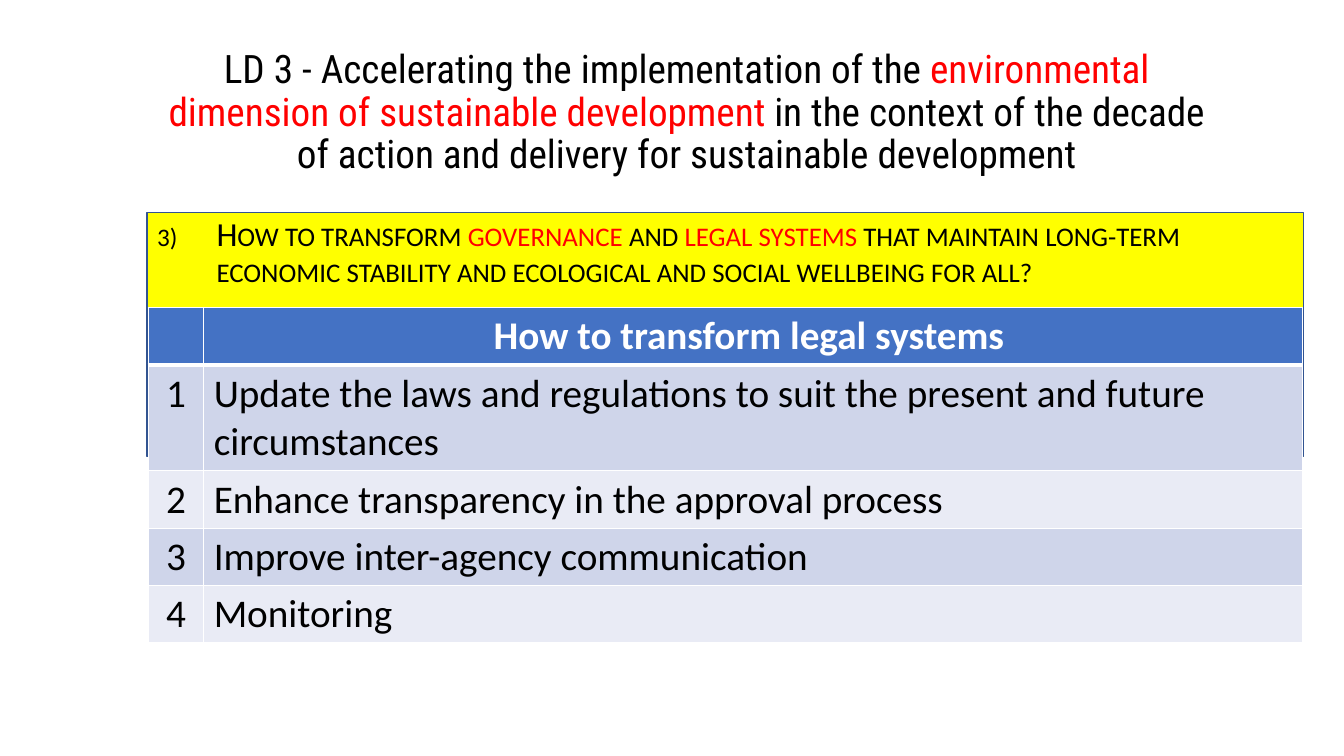
"""Build the slide on transforming governance and legal systems."""
import dataclasses

import lxml.etree
import pptx
import pptx.dml.color
import pptx.enum.shapes
import pptx.enum.text
import pptx.oxml.ns
import pptx.util

Inches = pptx.util.Inches
Pt = pptx.util.Pt
ALIGN = pptx.enum.text.PP_ALIGN


@dataclasses.dataclass(frozen=True)
class Theme:
    """Colours, fonts and type sizes of the slide."""
    ink: str = "000000"
    accent: str = "FF0000"
    white: str = "FFFFFF"
    panel: str = "FFFF00"
    panel_line: str = "325491"
    header: str = "4472C4"
    bands: tuple = ("CFD5EA", "E9EBF5")
    title_font: str = "Roboto Condensed"
    body_font: str = "Calibri"
    large: int = 28
    medium: int = 24


THEME = Theme()

TITLE = [
    ("LD 3 - Accelerating the implementation of the ", THEME.ink),
    ("environmental dimension of sustainable development ", THEME.accent),
    ("in the context of the decade of action and delivery for sustainable development", THEME.ink),
]
QUESTION = [
    ("How to transform ", THEME.ink),
    ("governance", THEME.accent),
    (" and ", THEME.ink),
    ("legal systems ", THEME.accent),
    ("that maintain long-term economic stability and ecological and social wellbeing for all?", THEME.ink),
]
QUESTION_NUMBER = 3
TABLE_HEADING = "How to transform legal systems "
MEASURES = [
    "Update the laws and regulations to suit the present and future circumstances",
    "Enhance transparency in the approval process",
    "Improve inter-agency communication",
    "Monitoring",
]
TITLE_BOX = (1.46, 0.4, 10.7, 1.45)
PANEL_BOX = (1.46, 2.11, 11.47, 2.42)
QUESTION_BOX = (1.46, 2.11, 10.96, 5.33)
TABLE_CORNER = (1.47, 3.05)
COLUMN_WIDTHS = (0.55, 10.9)
ROW_HEIGHTS = (0.57, 1.05, 0.57, 0.57, 0.57)


def rgb(value):
    """Return a colour object for a hex value."""
    return pptx.dml.color.RGBColor.from_string(value)


def inches(box):
    """Convert a tuple of numbers to lengths."""
    return [Inches(value) for value in box]


def add_node(parent, tag, **attributes):
    """Append a drawing element and return it."""
    return lxml.etree.SubElement(parent, pptx.oxml.ns.qn(tag), attributes)


def write_spans(para, spans, font_name, size):
    """Fill a paragraph with coloured spans of one font."""
    para.line_spacing = 0.9
    para.font.name = font_name
    para.font.size = Pt(size)
    for text, colour in spans:
        span = para.add_run()
        span.text = text
        span.font.color.rgb = rgb(colour)


def add_title(page):
    """Place and fill the title placeholder."""
    title = page.shapes.title
    title.left, title.top, title.width, title.height = inches(TITLE_BOX)
    frame = title.text_frame
    frame.word_wrap = True
    frame.auto_size = pptx.enum.text.MSO_AUTO_SIZE.NONE
    frame.vertical_anchor = pptx.enum.text.MSO_ANCHOR.MIDDLE
    para = frame.paragraphs[0]
    para.alignment = ALIGN.CENTER
    write_spans(para, TITLE, THEME.title_font, THEME.large)


def add_panel(page):
    """Draw the yellow panel behind the question."""
    panel = page.shapes.add_shape(pptx.enum.shapes.MSO_SHAPE.RECTANGLE, *inches(PANEL_BOX))
    panel.shadow.inherit = False
    panel.fill.solid()
    panel.fill.fore_color.rgb = rgb(THEME.panel)
    panel.line.color.rgb = rgb(THEME.panel_line)
    panel.line.width = Pt(1)


def add_question(page):
    """Write the numbered question in small capitals."""
    frame = page.shapes.add_textbox(*inches(QUESTION_BOX)).text_frame
    frame.word_wrap = True
    para = frame.paragraphs[0]
    para.space_before = Pt(10)
    write_spans(para, QUESTION, THEME.body_font, THEME.medium)
    for span in para.runs:
        span.font._element.set("cap", "small")
    settings = para._p.get_or_add_pPr()
    settings.set("marL", str(Inches(0.59)))
    settings.set("indent", str(-Inches(0.59)))
    default_font = settings.find(pptx.oxml.ns.qn("a:defRPr"))
    size = add_node(settings, "a:buSzPct", val="75000")
    number = add_node(settings, "a:buAutoNum", type="arabicParenR", startAt=str(QUESTION_NUMBER))
    if default_font is not None:
        default_font.addprevious(size)
        default_font.addprevious(number)


def style_cell(cell, fill, bottom_width):
    """Give a cell white borders and a solid fill."""
    settings = cell._tc.get_or_add_tcPr()
    for side, width in (("L", 1), ("R", 1), ("T", 1), ("B", bottom_width)):
        border = add_node(settings, f"a:ln{side}", w=str(Pt(width)))
        add_node(add_node(border, "a:solidFill"), "a:srgbClr", val=THEME.white)
    cell.fill.solid()
    cell.fill.fore_color.rgb = rgb(fill)


def add_measures(page):
    """Build the table of numbered measures."""
    rows = [("", TABLE_HEADING)]
    rows += [(str(number), measure) for number, measure in enumerate(MEASURES, 1)]
    size = (sum(COLUMN_WIDTHS), sum(ROW_HEIGHTS))
    table = page.shapes.add_table(len(rows), len(COLUMN_WIDTHS), *inches(TABLE_CORNER + size)).table
    for column, width in zip(table.columns, COLUMN_WIDTHS):
        column.width = Inches(width)
    for row, height in zip(table.rows, ROW_HEIGHTS):
        row.height = Inches(height)
    for row_index, texts in enumerate(rows):
        is_header = row_index == 0
        fill = THEME.header if is_header else THEME.bands[(row_index - 1) % 2]
        for column_index, text in enumerate(texts):
            cell = table.cell(row_index, column_index)
            style_cell(cell, fill, 3 if is_header else 1)
            cell.text = text
            para = cell.text_frame.paragraphs[0]
            para.alignment = ALIGN.CENTER if is_header or column_index == 0 else ALIGN.LEFT
            para.font.name = THEME.body_font
            para.font.size = Pt(THEME.large)
            para.font.bold = is_header
            para.font.color.rgb = rgb(THEME.white if is_header else THEME.ink)


def main():
    """Assemble the slide and save it."""
    deck = pptx.Presentation()
    deck.slide_width, deck.slide_height = inches((13.33, 7.5))
    page = deck.slides.add_slide(deck.slide_layouts[5])
    add_panel(page)
    add_question(page)
    add_title(page)
    add_measures(page)
    deck.save("out.pptx")


if __name__ == "__main__":
    main()
